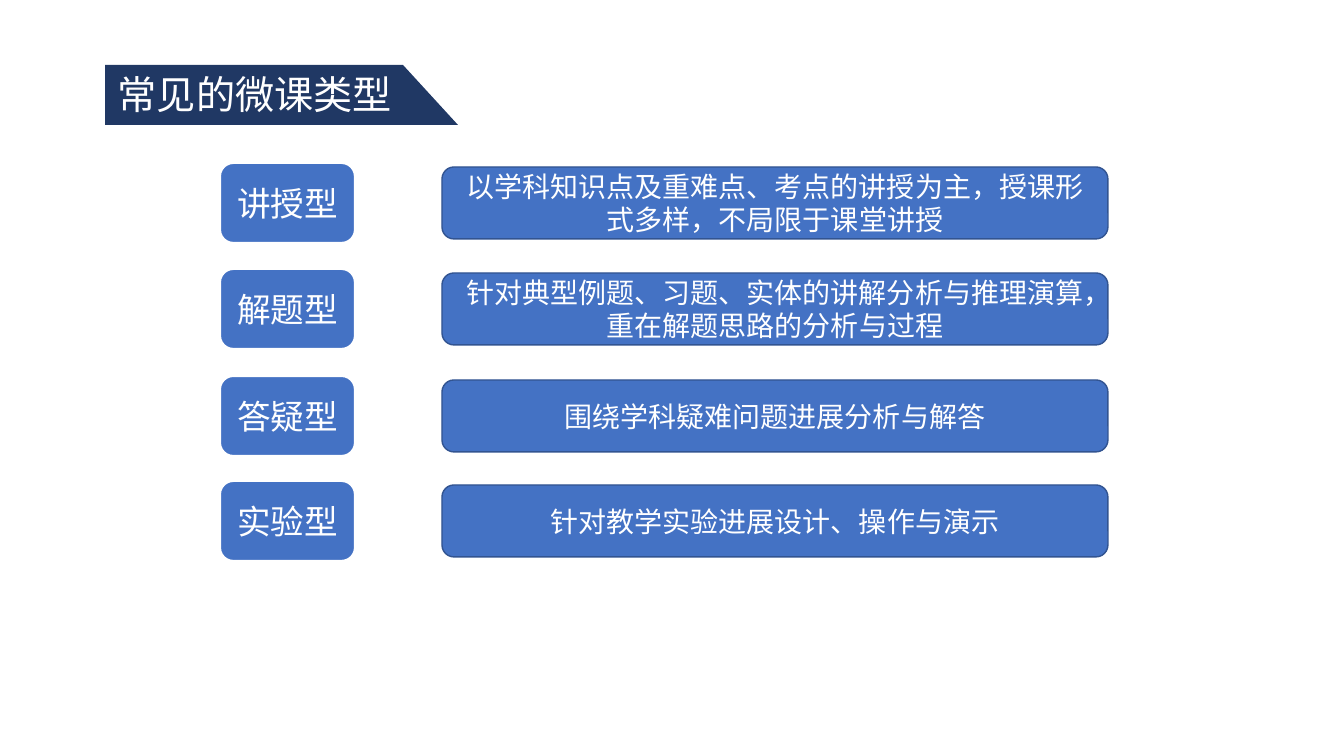
import pptx
import pptx.dml.color
import pptx.enum.shapes
import pptx.enum.text
import pptx.oxml.ns
import pptx.util
import lxml.etree

PX = 914400 / 100.8
SANS = "Noto Sans CJK SC"
WHITE, BLUE, NAVY, EDGE = "FFFFFF", "4472C4", "203864", "325491"


def paint(sp, fill, line=None, width=0):
    """Set fill and outline of a shape and remove its shadow."""
    sp.shadow.inherit = False
    sp.fill.solid()
    sp.fill.fore_color.rgb = pptx.dml.color.RGBColor.from_string(fill)
    if line:
        sp.line.color.rgb = pptx.dml.color.RGBColor.from_string(line)
        sp.line.width = pptx.util.Pt(width)
    else:
        sp.line.fill.background()


def write(sp, text, size, font):
    """Add one white run, using the font for Chinese text as well."""
    r = sp.text_frame.paragraphs[0].add_run()
    r.text = text
    r.font.size = pptx.util.Pt(size)
    r.font.name = font
    r.font.color.rgb = pptx.dml.color.RGBColor.from_string(WHITE)
    ea = lxml.etree.Element(pptx.oxml.ns.qn("a:ea"), typeface=font)
    r.font._element.find(pptx.oxml.ns.qn("a:latin")).addnext(ea)


prs = pptx.Presentation()
prs.slide_width, prs.slide_height = round(1344 * PX), round(756 * PX)
s = prs.slides.add_slide(prs.slide_layouts[6])

# Title banner
fb = s.shapes.build_freeform(105, 65, scale=PX)
fb.add_line_segments([(403, 65), (458, 125), (105, 125)], close=True)
paint(fb.convert_to_shape(), NAVY)
title = s.shapes.add_textbox(*(round(v * PX) for v in (108, 65, 294, 57)))
title.text_frame.word_wrap = False
title.text_frame.auto_size = pptx.enum.text.MSO_AUTO_SIZE.SHAPE_TO_FIT_TEXT
write(title, "常见的微课类型", 28, SANS)

# One row per lesson type: label on the left, description on the right
rows = [
    (163, "讲授型", "以学科知识点及重难点、考点的讲授为主，授课形式多样，不局限于课堂讲授"),
    (269, "解题型", "针对典型例题、习题、实体的讲解分析与推理演算，重在解题思路的分析与过程"),
    (376, "答疑型", "围绕学科疑难问题进展分析与解答"),
    (481, "实验型", "针对教学实验进展设计、操作与演示"),
]
for top, label, description in rows:
    for box, text, size, font, line, width in (
        ((220, top, 135, 80), label, 24, SANS, WHITE, 1.5),
        ((442, top + 4, 666, 72), description, 20, "Calibri", EDGE, 1),
    ):
        sp = s.shapes.add_shape(pptx.enum.shapes.MSO_SHAPE.ROUNDED_RECTANGLE,
                                *(round(v * PX) for v in box))
        paint(sp, BLUE, line, width)
        tf = sp.text_frame
        tf.word_wrap = True
        tf.vertical_anchor = pptx.enum.text.MSO_ANCHOR.MIDDLE
        tf.paragraphs[0].alignment = pptx.enum.text.PP_ALIGN.CENTER
        write(sp, text, size, font)

prs.save("out.pptx")
